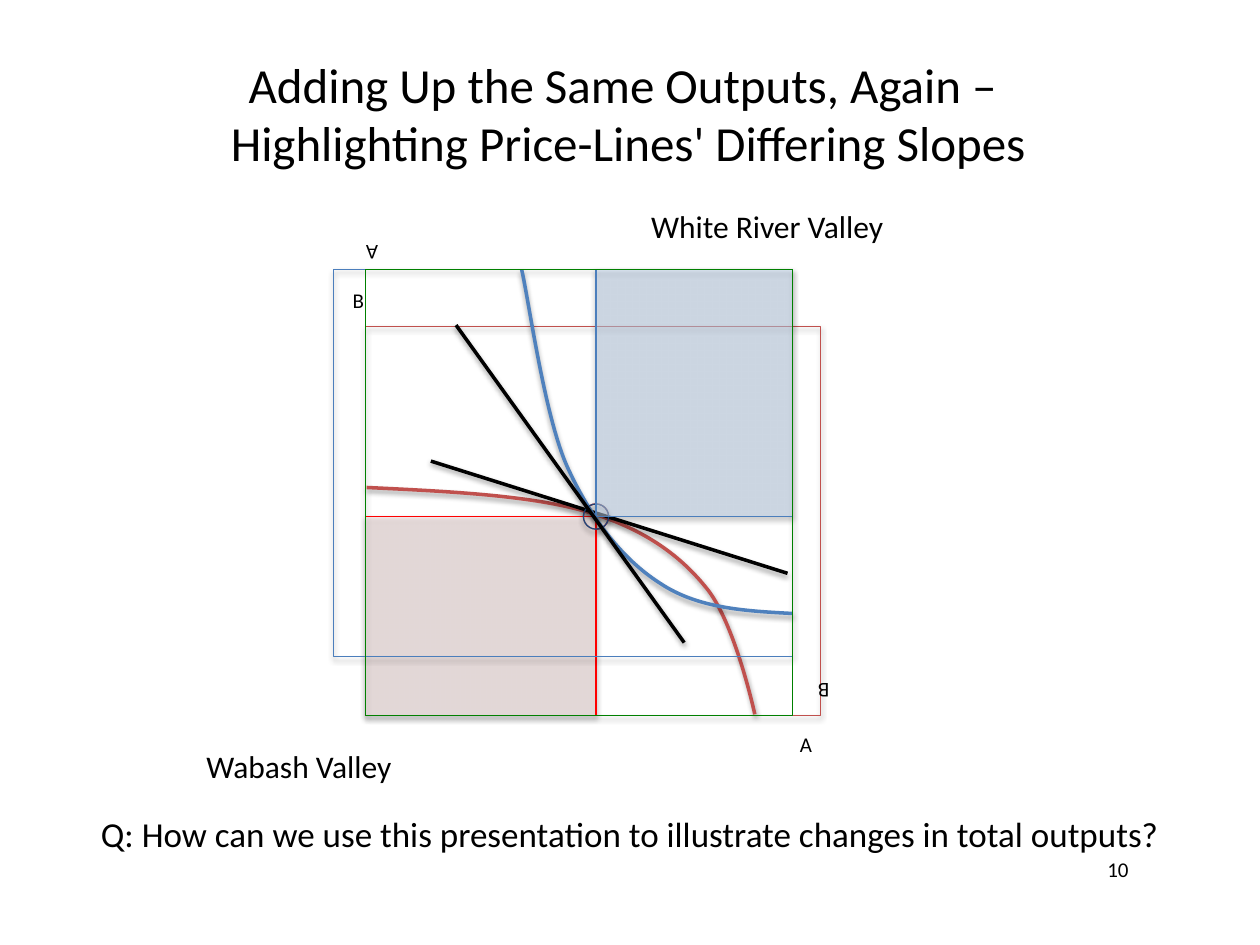
from lxml import etree
from pptx import Presentation
from pptx.dml.color import RGBColor
from pptx.enum.shapes import MSO_CONNECTOR, MSO_SHAPE
from pptx.enum.text import MSO_ANCHOR, MSO_AUTO_SIZE, PP_ALIGN
from pptx.oxml.ns import qn
from pptx.util import Pt

THEME = {
    "font": "Calibri",
    "small": 12, "label": 18, "question": 20, "title": 28,
    "text": "000000", "white": "FFFFFF",
    "wabash": "C0504D", "wabash_area": "F2DCDB", "wabash_mark": "FF0000",
    "river": "4B7EBC", "river_curve": "4F81BD", "river_area": "C6D9F1",
    "river_mark": "1F497D", "total": "008000",
    "thin": 0.75, "thick": 2,
}

LEFT, SPLIT_X, RIGHT = 208.8, 340.6, 452.9
TOP, SPLIT_Y, BOTTOM = 154.1, 295.2, 408.9
WABASH_RIGHT, WABASH_TOP = 468.7, 186.5
RIVER_LEFT, RIVER_BOTTOM = 190.8, 375.1
MARK_RADIUS = 7.2

PAGE_NUMBER = ("10", (625.7, 486, 40.3, 21.6), "small")
VALLEYS = [
    ("Wabash Valley", (110.9, 423.4, 131.8, 30), "label"),
    ("White River Valley", (365, 114.5, 151.2, 29), "label"),
]
TITLE = ("Adding Up the Same Outputs, Again – \nHighlighting Price-Lines' Differing Slopes",
         (57.6, 27.4, 602.6, 75), "title")
QUESTION = ("Q: How can we use this presentation to illustrate changes in total outputs?",
            (57.6, 460.8, 604.8, 36), "question")

ECONOMIES = [
    {
        "axes": [("B", (194.4, 160.6, 41, 21.6), "small"),
                 ("A", (450, 414.7, 47.5, 21.6), "small")],
        "turn": 0, "framed": True,
        "box": (LEFT, WABASH_TOP, WABASH_RIGHT, BOTTOM), "box_line": "wabash",
        "curve": [(209.5, 278.6),
                  (255.6, 280.8), (302.4, 283), (334.8, 292.3),
                  (366.5, 301.7), (387.4, 316.1), (403.2, 335.5),
                  (419.8, 355), (431.3, 408.2), (431.3, 408.2)],
        "curve_line": "wabash", "mark_line": "wabash_mark",
        "area": (LEFT, SPLIT_Y, SPLIT_X, BOTTOM),
        "area_fill": "wabash_area", "area_line": "wabash_mark",
        "price": (246.2, 263.5, 450, 327.6),
    },
    {
        "axes": [("A", (179.3, 133.9, 43.9, 21.6), "small"),
                 ("B", (438.5, 384.5, 42.5, 21.6), "small")],
        "turn": 180, "framed": False,
        "box": (RIVER_LEFT, TOP, RIGHT, RIVER_BOTTOM), "box_line": "river",
        "curve": [(RIGHT, 350.6),
                  (426.2, 349.2), (398.9, 347.8), (377.3, 333.4),
                  (355.7, 319.7), (337.7, 296.6), (324, 266.4),
                  (311, 236.9), (302.4, 172.8), (298.1, TOP)],
        "curve_line": "river_curve", "mark_line": "river_mark",
        "area": (SPLIT_X, TOP, RIGHT, SPLIT_Y),
        "area_fill": "river_area", "area_line": "river",
        "price": (391, 367.2, 260.6, 185.8),
    },
]


def color(name):
    return RGBColor.from_string(THEME[name])


def points(values):
    return [Pt(value) for value in values]


def style_line(item, name, weight):
    item.line.color.rgb = color(name)
    item.line.width = Pt(THEME[weight])


def set_shadow(item, opacity=0, distance=1.8):
    effects = etree.SubElement(item._element.spPr, qn("a:effectLst"))
    if opacity:
        shadow = etree.SubElement(effects, qn("a:outerShdw"), blurRad=str(Pt(3.1)),
                                  dist=str(Pt(distance)), dir="5400000", rotWithShape="0")
        black = etree.SubElement(shadow, qn("a:srgbClr"), val="000000")
        etree.SubElement(black, qn("a:alpha"), val=str(opacity * 1000))


def add_label(shapes, label, align=PP_ALIGN.LEFT, inset=7.2, turn=0, framed=False):
    text, place, size = label
    if framed:
        box = shapes.add_shape(MSO_SHAPE.RECTANGLE, *points(place))
        box.fill.background()
        style_line(box, "white", "thin")
        set_shadow(box)
    else:
        box = shapes.add_textbox(*points(place))
    box.rotation = turn
    frame = box.text_frame
    frame.text = text
    frame.word_wrap = True
    frame.auto_size = MSO_AUTO_SIZE.SHAPE_TO_FIT_TEXT
    frame.vertical_anchor = MSO_ANCHOR.TOP
    frame.margin_left = frame.margin_right = Pt(inset)
    for para in frame.paragraphs:
        para.alignment = align
        for span in para.runs:
            span.font.name = THEME["font"]
            span.font.size = Pt(THEME[size])
            span.font.color.rgb = color("text")


def add_outline(shapes, edges, line, kind=MSO_SHAPE.RECTANGLE, fill=None, opacity=35):
    left, top, right, bottom = edges
    shape = shapes.add_shape(kind, *points((left, top, right - left, bottom - top)))
    if fill:
        shape.fill.solid()
        shape.fill.fore_color.rgb = color(fill)
        tint = shape._element.spPr.find(qn("a:solidFill"))[0]
        etree.SubElement(tint, qn("a:alpha"), val="50000")
    else:
        shape.fill.background()
    style_line(shape, line, "thin")
    set_shadow(shape, opacity)


def add_curve(shapes, knots, line):
    start, *rest = [points(knot) for knot in knots]
    builder = shapes.build_freeform(*start)
    builder.add_line_segments(rest, close=False)
    curve = builder.convert_to_shape()
    steps = list(curve._element.iter(qn("a:lnTo")))
    outline = steps[0].getparent()
    for first in range(0, len(steps), 3):
        bend = etree.SubElement(outline, qn("a:cubicBezTo"))
        for step in steps[first:first + 3]:
            bend.append(step[0])
            outline.remove(step)
    curve.fill.background()
    style_line(curve, line, "thick")
    set_shadow(curve, 38, 1.6)


def add_price_line(shapes, ends):
    price = shapes.add_connector(MSO_CONNECTOR.STRAIGHT, *points(ends))
    style_line(price, "text", "thick")
    set_shadow(price, 38, 1.6)


def add_economy(page, economy):
    shapes = page.shapes.add_group_shape().shapes
    mark = (SPLIT_X - MARK_RADIUS, SPLIT_Y - MARK_RADIUS,
            SPLIT_X + MARK_RADIUS, SPLIT_Y + MARK_RADIUS)
    for axis in economy["axes"]:
        add_label(shapes, axis, turn=economy["turn"], framed=economy["framed"])
    add_outline(shapes, economy["box"], economy["box_line"])
    add_curve(shapes, economy["curve"], economy["curve_line"])
    add_outline(shapes, mark, economy["mark_line"], MSO_SHAPE.OVAL)
    add_outline(shapes, economy["area"], economy["area_line"], fill=economy["area_fill"])
    add_price_line(shapes, economy["price"])


def main():
    """Build the slide on two overlapping valley economies."""
    deck = Presentation()
    deck.slide_width, deck.slide_height = Pt(720), Pt(540)
    page = deck.slides.add_slide(deck.slide_layouts[6])
    for label in [PAGE_NUMBER, *VALLEYS]:
        add_label(page.shapes, label)
    for economy in ECONOMIES:
        add_economy(page, economy)
    add_outline(page.shapes, (LEFT, TOP, RIGHT, BOTTOM), "total", opacity=0)
    add_label(page.shapes, TITLE, PP_ALIGN.CENTER)
    add_label(page.shapes, QUESTION, PP_ALIGN.CENTER, inset=0)
    deck.save("out.pptx")


if __name__ == "__main__":
    main()
